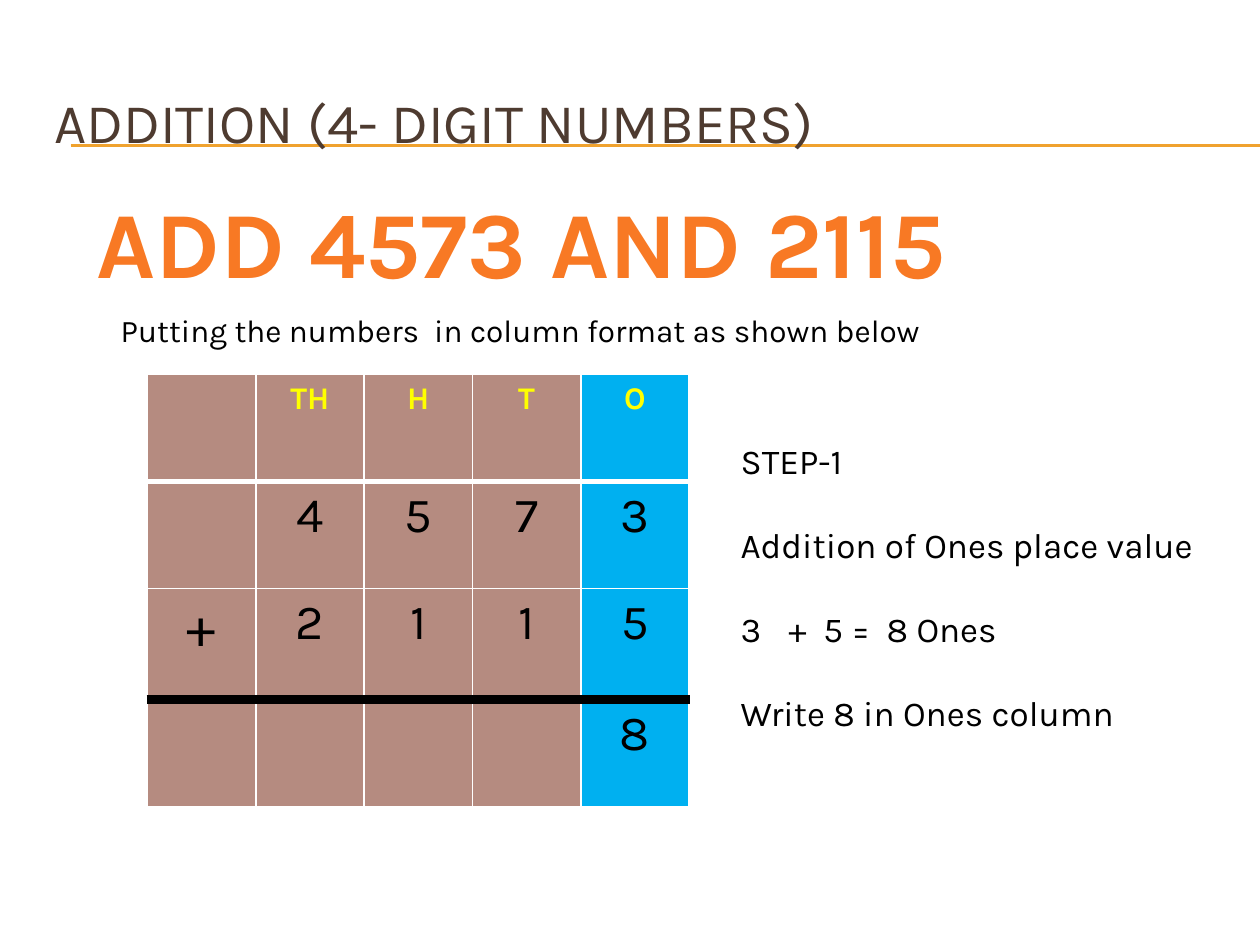
from lxml import etree
from pptx import Presentation
from pptx import util as u
from pptx.dml.color import RGBColor
from pptx.enum import shapes, text
from pptx.oxml import ns

BROWN = RGBColor(0x4E, 0x3B, 0x30)
GOLD = RGBColor(0xF0, 0xA2, 0x2E)
ORANGE = RGBColor(0xF8, 0x79, 0x24)
ROSE = RGBColor(0xB5, 0x8B, 0x80)
BLUE = RGBColor(0x00, 0xB0, 0xF0)
YELLOW = RGBColor(0xFF, 0xFF, 0x00)
WHITE = RGBColor(0xFF, 0xFF, 0xFF)
BLACK = RGBColor(0, 0, 0)
FONT = "Karla"

TITLE = "ADDITION (4- DIGIT NUMBERS)"
PROBLEM = "ADD 4573 AND 2115"
INTRO = "Putting the numbers  in column format as shown below"
STEPS = ["STEP-1", "Addition of Ones place value", "+  5 =  8 Ones",
         "Write 8 in Ones column"]
NUMBERED_STEP, FIRST_NUMBER = 2, 3
SUM_GRID = [
    ["", "TH", "H", "T", "O"],
    ["", "4", "5", "7", "3"],
    ["+", "2", "1", "1", "5"],
    ["", "", "", "", "8"],
]
ROW_HEIGHTS = [0.85, 0.85, 0.88, 0.85]
COLUMN_WIDTH = 0.86
RULES = [(WHITE, 1), (WHITE, 3), (WHITE, 1), (BLACK, 6), (WHITE, 1)]


def style(para, size, color, bold=False):
    for span in para.runs:
        span.font.name = FONT
        span.font.size = u.Pt(size)
        span.font.bold = bold
        span.font.color.rgb = color


def add_text(page, place, lines, size, color, bold=False, wrap=True):
    box = page.shapes.add_textbox(*map(u.Inches, place))
    frame = box.text_frame
    frame.word_wrap = wrap
    frame.text = "\n".join(lines)
    for para in frame.paragraphs:
        style(para, size, color, bold)
    return frame


def add_rule(page, y):
    line = page.shapes.add_connector(shapes.MSO_CONNECTOR.STRAIGHT, u.Inches(0.56),
                                     u.Inches(y), u.Inches(10), u.Inches(y))
    line.line.color.rgb = GOLD
    line.line.width = u.Pt(0.75)
    etree.SubElement(line.element.spPr, ns.qn("a:effectLst"))
    page.shapes.title.element.addprevious(line.element)


def add_border(cell, side, color, width):
    border = etree.SubElement(cell._tc.get_or_add_tcPr(), ns.qn(f"a:ln{side}"),
                              w=str(u.Pt(width)))
    fill = etree.SubElement(border, ns.qn("a:solidFill"))
    etree.SubElement(fill, ns.qn("a:srgbClr"), val=str(color))


def add_sum_table(page):
    rows, columns = len(SUM_GRID), len(SUM_GRID[0])
    table = page.shapes.add_table(rows, columns, u.Inches(1.17), u.Inches(2.97),
                                  u.Inches(COLUMN_WIDTH * columns),
                                  u.Inches(sum(ROW_HEIGHTS))).table
    table.horz_banding = False
    for column in table.columns:
        column.width = u.Inches(COLUMN_WIDTH)
    for r, values in enumerate(SUM_GRID):
        table.rows[r].height = u.Inches(ROW_HEIGHTS[r])
        for c, value in enumerate(values):
            cell = table.cell(r, c)
            borders = {"L": (WHITE, 1), "R": (WHITE, 1), "T": RULES[r], "B": RULES[r + 1]}
            for side, (color, width) in borders.items():
                add_border(cell, side, color, width)
            cell.fill.solid()
            cell.fill.fore_color.rgb = BLUE if c == columns - 1 else ROSE
            cell.text_frame.text = value
            para = cell.text_frame.paragraphs[0]
            para.alignment = text.PP_ALIGN.CENTER
            if r == 0:
                style(para, 18, YELLOW, True)
            else:
                style(para, 32 if value == "+" else 28, BLACK)


def add_steps(page):
    frame = add_text(page, (5.78, 3.44, 4.06, 2.76), STEPS, 20, BLACK)
    for para in frame.paragraphs[1:]:
        para.space_before = u.Pt(24)
    properties = frame.paragraphs[NUMBERED_STEP]._p.get_or_add_pPr()
    properties.set("marL", str(u.Inches(0.38)))
    properties.set("indent", str(-u.Inches(0.38)))
    etree.SubElement(properties, ns.qn("a:buFont"), typeface=FONT)
    etree.SubElement(properties, ns.qn("a:buAutoNum"), type="arabicPlain",
                     startAt=str(FIRST_NUMBER))


def main():
    deck = Presentation()
    deck.slide_width, deck.slide_height = u.Inches(10), u.Inches(7.5)
    page = deck.slides.add_slide(deck.slide_layouts[5])

    title = page.shapes.title
    title.left, title.top = u.Inches(0.33), u.Inches(0.5)
    title.width, title.height = u.Inches(9.5), u.Inches(0.92)
    frame = title.text_frame
    frame.text = TITLE
    frame.auto_size = text.MSO_AUTO_SIZE.NONE
    frame.vertical_anchor = text.MSO_ANCHOR.MIDDLE
    frame.paragraphs[0].alignment = text.PP_ALIGN.LEFT
    style(frame.paragraphs[0], 32, BROWN)

    for y in (1.15, 1.16):
        add_rule(page, y)
    add_sum_table(page)
    problem = add_text(page, (0.62, 1.41, 7.03, 1.01), [PROBLEM], 54, ORANGE, True, False)
    problem.paragraphs[0].alignment = text.PP_ALIGN.CENTER
    add_steps(page)
    add_text(page, (0.86, 2.42, 6.72, 0.4), [INTRO], 18, BLACK)
    deck.save("out.pptx")


if __name__ == "__main__":
    main()
